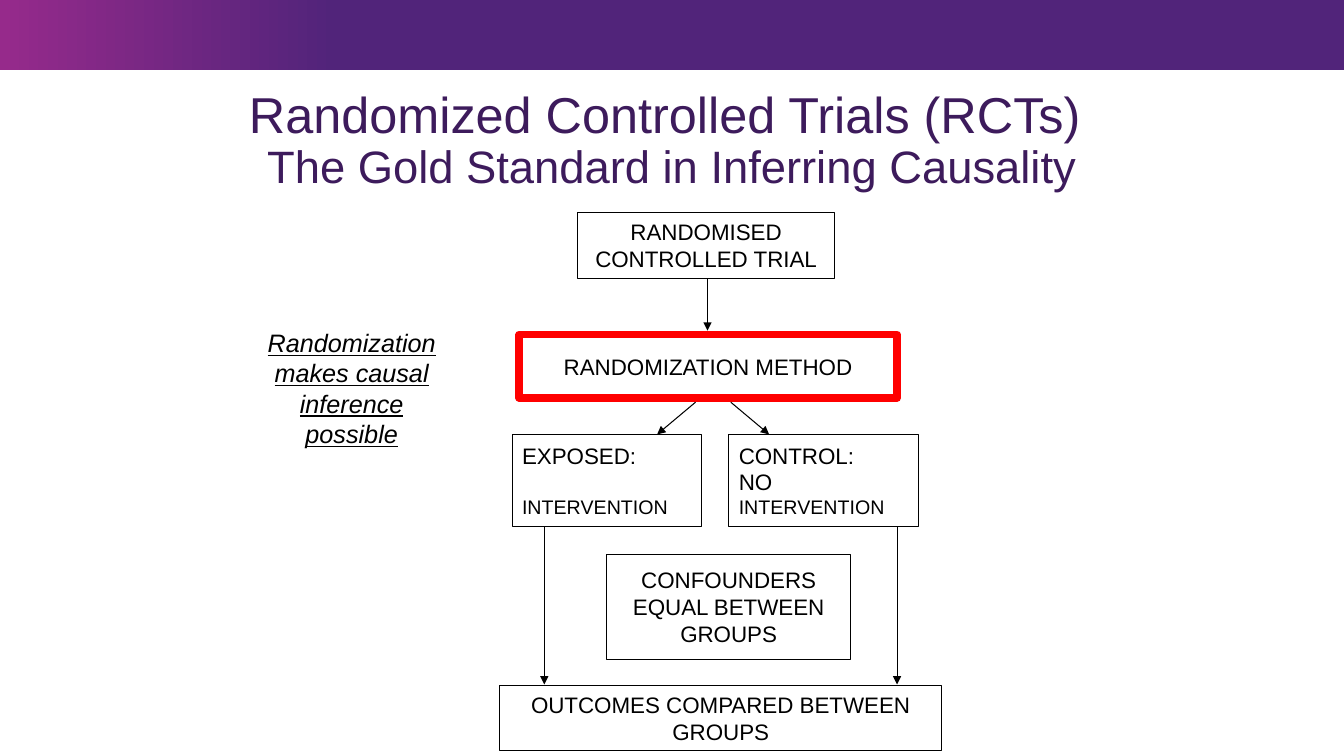
from copy import deepcopy
from dataclasses import dataclass

from lxml.etree import SubElement as Sub
from pptx import Presentation
from pptx.dml.color import RGBColor as RGB
from pptx.enum.shapes import MSO_CONNECTOR as LINK, MSO_SHAPE as SHAPE
from pptx.enum.text import MSO_ANCHOR as ANCHOR, MSO_AUTO_SIZE as FIT, PP_ALIGN as ALIGN
from pptx.oxml.ns import qn
from pptx.util import Pt


@dataclass(frozen=True)
class Theme:
    face: str = "Arial"
    title: RGB = RGB(0x3D, 0x1B, 0x5C)
    ink: RGB = RGB(0, 0, 0)
    paper: RGB = RGB(255, 255, 255)
    alert: RGB = RGB(255, 0, 0)
    pink: RGB = RGB(0x96, 0x2A, 0x8B)
    plum: RGB = RGB(0x51, 0x24, 0x7A)
    head: float = 36
    sub: float = 32.4
    note: float = 18
    body: float = 16
    small: float = 14
    thin: float = 0.75
    thick: float = 5.25


LOOK = Theme()


def place(*nums):
    return [Pt(n) for n in nums]


def style(run, size, color=LOOK.ink):
    run.font.name = LOOK.face
    run.font.size = Pt(size)
    run.font.color.rgb = color


def add_band(slide):
    band = slide.shapes.add_shape(SHAPE.RECTANGLE, *place(0, 0, 960, 49.7))
    band.shadow.inherit = False
    band.line.fill.background()
    band.fill.gradient()
    band.fill.gradient_angle = 0
    stops = band.fill.gradient_stops
    for stop, color, pos in zip(stops, (LOOK.pink, LOOK.plum), (0, 0.25)):
        stop.color.rgb = color
        stop.position = pos


def set_title(slide, head, sub):
    title = slide.shapes.title
    title.left, title.top, title.width, title.height = place(54.7, 82.8, 850.3, 36.7)
    frame = title.text_frame
    frame.auto_size = FIT.NONE
    frame.word_wrap = True
    frame.vertical_anchor = ANCHOR.MIDDLE
    frame.margin_left = frame.margin_right = frame.margin_top = frame.margin_bottom = 0
    frame.text = f"{head}\v{sub}"
    para = frame.paragraphs[0]
    para.alignment = ALIGN.CENTER
    para.line_spacing = 0.9
    for run, size in zip(para.runs, (LOOK.head, LOOK.sub)):
        style(run, size, LOOK.title)
    # The line break takes the size of the first line
    para._p.find(qn("a:br")).append(deepcopy(para.runs[0]._r.rPr))


def add_box(slide, spot, text, align=ALIGN.CENTER, edge=LOOK.ink, width=LOOK.thin):
    box = slide.shapes.add_shape(SHAPE.RECTANGLE, *place(*spot))
    box.shadow.inherit = False
    box.fill.solid()
    box.fill.fore_color.rgb = LOOK.paper
    box.line.color.rgb = edge
    box.line.width = Pt(width)
    frame = box.text_frame
    frame.word_wrap = True
    frame.vertical_anchor = ANCHOR.MIDDLE
    frame.text = text
    for para in frame.paragraphs:
        para.alignment = align
        for run in para.runs:
            style(run, LOOK.body)
    return frame


def add_arm(slide, left, text, gap=0):
    """Draw a trial arm whose last line ends in a smaller INTERVENTION."""
    frame = add_box(slide, (left, 310.3, 135.4, 65.5), text, ALIGN.LEFT)
    last = frame.paragraphs[-1]
    run = last.add_run()
    run.text = "INTERVENTION"
    style(run, LOOK.small)
    if gap:
        last.space_before = Pt(gap)


def add_arrow(slide, *ends):
    arrow = slide.shapes.add_connector(LINK.STRAIGHT, *place(*ends))
    arrow.line.color.rgb = LOOK.ink
    arrow.line.width = Pt(LOOK.thin)
    Sub(arrow.line._get_or_add_ln(), qn("a:tailEnd"), type="triangle")
    Sub(arrow._element.spPr, qn("a:effectLst"))


def add_note(slide, text):
    frame = slide.shapes.add_textbox(*place(156.2, 230.4, 190, 72.7)).text_frame
    frame.word_wrap = True
    frame.text = text
    for para in frame.paragraphs:
        para.alignment = ALIGN.CENTER
        for run in para.runs:
            style(run, LOOK.note)
            run.font.italic = run.font.underline = True


def main():
    deck = Presentation()
    deck.slide_width, deck.slide_height = place(960, 540)
    slide = deck.slides.add_slide(deck.slide_layouts[5])

    add_band(slide)
    set_title(slide, "Randomized Controlled Trials (RCTs) ",
              "The Gold Standard in Inferring Causality")

    add_box(slide, (370.8, 239, 270, 45.4), "RANDOMIZATION METHOD",
            edge=LOOK.alert, width=LOOK.thick)
    add_box(slide, (412.6, 151.9, 183.6, 46.8), "RANDOMISED CONTROLLED TRIAL")
    add_box(slide, (433.4, 396, 174.2, 74.9), "CONFOUNDERS EQUAL BETWEEN GROUPS")
    add_box(slide, (357.1, 489.6, 315.4, 46.8), "OUTCOMES COMPARED BETWEEN GROUPS")
    add_arm(slide, 365.8, "EXPOSED:\n", gap=19)
    add_arm(slide, 520.6, "CONTROL:\nNO ")

    add_arrow(slide, 505.4, 198.7, 505.4, 236.2)
    for start, end, side in ((496.8, 469.4, 388.8), (522, 549.4, 640.8)):
        add_arrow(slide, start, 287.3, end, 310.3)
        add_arrow(slide, side, 376.6, side, 488.9)

    add_note(slide, "Randomization\nmakes causal inference\npossible")
    deck.save("out.pptx")


if __name__ == "__main__":
    main()
